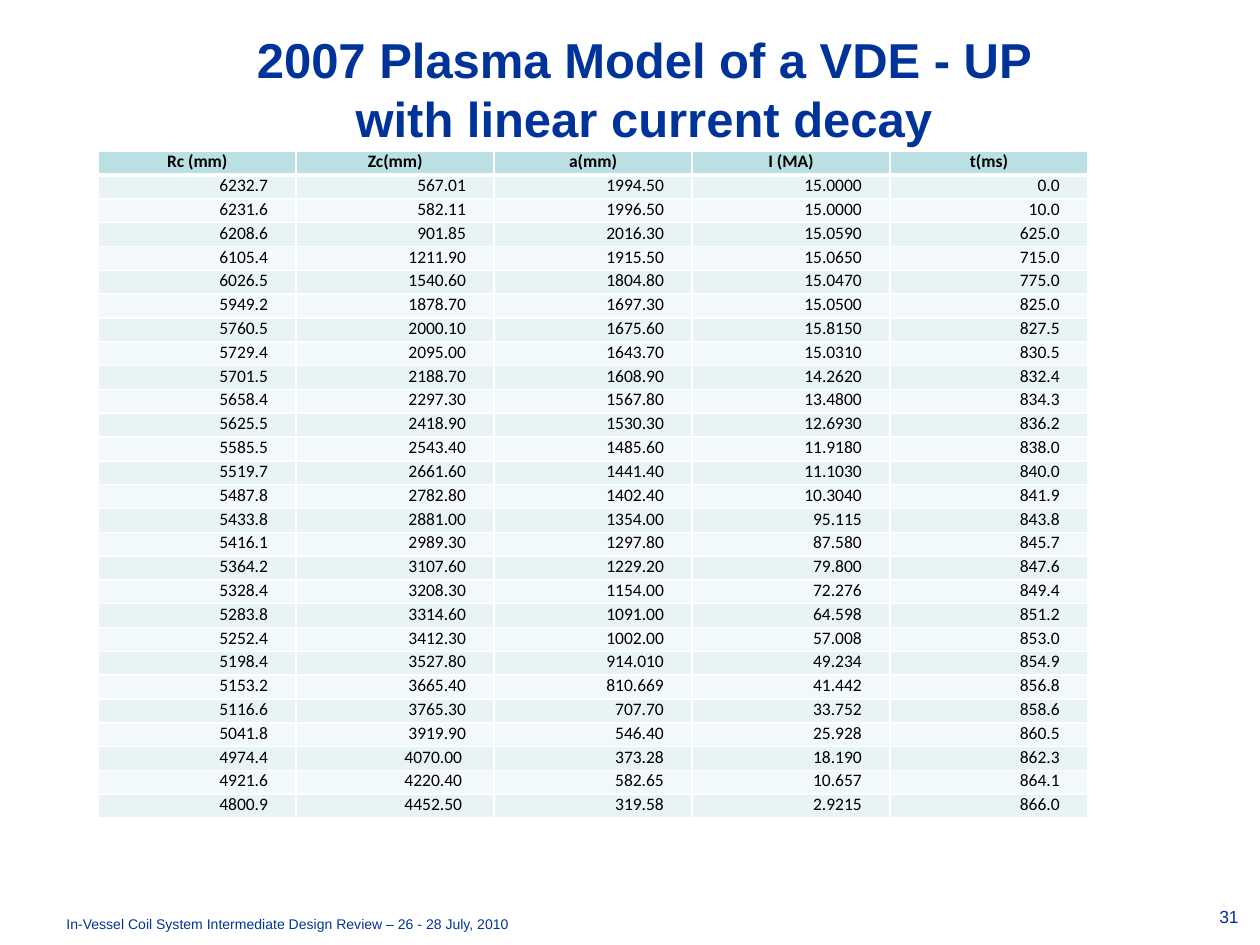
import pptx
import pptx.dml.color
import pptx.enum.text
import pptx.oxml.ns
import pptx.util
import lxml.etree

Cm = pptx.util.Cm
Pt = pptx.util.Pt
ALIGN = pptx.enum.text.PP_ALIGN
ANCHOR = pptx.enum.text.MSO_ANCHOR

COLORS = {
    "navy": "003399",
    "black": "000000",
    "white": "FFFFFF",
    "header": "BBE0E3",
    "odd": "E7F3F4",
    "even": "F3F9FA",
}

HEADINGS = ["Rc (mm)", "Zc(mm)", "a(mm)", "I (MA)", "t(ms)"]

PLASMA_ROWS = [line.split(",") for line in (
    "6232.7,567.01,1994.50,15.0000,0.0",
    "6231.6,582.11,1996.50,15.0000,10.0",
    "6208.6,901.85,2016.30,15.0590,625.0",
    "6105.4,1211.90,1915.50,15.0650,715.0",
    "6026.5,1540.60,1804.80,15.0470,775.0",
    "5949.2,1878.70,1697.30,15.0500,825.0",
    "5760.5,2000.10,1675.60,15.8150,827.5",
    "5729.4,2095.00,1643.70,15.0310,830.5",
    "5701.5,2188.70,1608.90,14.2620,832.4",
    "5658.4,2297.30,1567.80,13.4800,834.3",
    "5625.5,2418.90,1530.30,12.6930,836.2",
    "5585.5,2543.40,1485.60,11.9180,838.0",
    "5519.7,2661.60,1441.40,11.1030,840.0",
    "5487.8,2782.80,1402.40,10.3040,841.9",
    "5433.8,2881.00,1354.00,95.115,843.8",
    "5416.1,2989.30,1297.80,87.580,845.7",
    "5364.2,3107.60,1229.20,79.800,847.6",
    "5328.4,3208.30,1154.00,72.276,849.4",
    "5283.8,3314.60,1091.00,64.598,851.2",
    "5252.4,3412.30,1002.00,57.008,853.0",
    "5198.4,3527.80,914.010,49.234,854.9",
    "5153.2,3665.40,810.669,41.442,856.8",
    "5116.6,3765.30,707.70,33.752,858.6",
    "5041.8,3919.90,546.40,25.928,860.5",
    "4974.4,4070.00 ,373.28,18.190,862.3",
    "4921.6,4220.40 ,582.65,10.657,864.1",
    "4800.9,4452.50 ,319.58,2.9215,866.0",
)]


def rgb(name):
    return pptx.dml.color.RGBColor.from_string(COLORS[name])


class SlideBuilder:
    """Holds the current slide and the style shared by its elements."""

    text_font = "Arial"
    table_font = "Calibri"
    table_size = 10
    cell_inset = Cm(0.18)
    number_indent = Cm(0.39)

    def __init__(self, slide):
        self.s = slide

    def run(self, p, text, font, size, color, bold=False):
        r = p.add_run()
        r.text = text
        r.font.name = font
        r.font.size = Pt(size)
        r.font.bold = bold
        r.font.color.rgb = rgb(color)

    def text(self, text, left, top, width, height, size,
             align=ALIGN.LEFT, anchor=ANCHOR.TOP, bold=False):
        sp = self.s.shapes.add_textbox(Cm(left), Cm(top), Cm(width), Cm(height))
        tf = sp.text_frame
        tf.word_wrap = True
        tf.vertical_anchor = anchor
        p = tf.paragraphs[0]
        p.alignment = align
        self.run(p, text, self.text_font, size, "navy", bold)

    def borders(self, cell, top, bottom):
        """Draw white cell borders; top and bottom are widths in points."""
        tcPr = cell._tc.get_or_add_tcPr()
        widths = {"a:lnL": 1, "a:lnR": 1, "a:lnT": top, "a:lnB": bottom}
        qn = pptx.oxml.ns.qn
        for tag, width in widths.items():
            ln = lxml.etree.SubElement(tcPr, qn(tag), w=str(Pt(width)))
            fill = lxml.etree.SubElement(ln, qn("a:solidFill"))
            lxml.etree.SubElement(fill, qn("a:srgbClr"), val=COLORS["white"])

    def cell(self, cell, text, row):
        is_header = row == 0
        cell.margin_left = cell.margin_right = self.cell_inset
        cell.margin_top = cell.margin_bottom = 0
        self.borders(cell, top=3 if row == 1 else 1, bottom=3 if is_header else 1)
        cell.fill.solid()
        fill = "header" if is_header else ("odd" if row % 2 else "even")
        cell.fill.fore_color.rgb = rgb(fill)
        p = cell.text_frame.paragraphs[0]
        p.alignment = ALIGN.CENTER if is_header else ALIGN.RIGHT
        if not is_header:
            p._p.get_or_add_pPr().set("marR", str(self.number_indent))
        self.run(p, text, self.table_font, self.table_size, "black", is_header)

    def table(self, rows, left, top, col_width, row_height):
        n_rows, n_cols = len(rows), len(rows[0])
        table = self.s.shapes.add_table(
            n_rows, n_cols, Cm(left), Cm(top),
            Cm(col_width * n_cols), Cm(row_height * n_rows)).table
        for column in table.columns:
            column.width = Cm(col_width)
        for i, values in enumerate(rows):
            table.rows[i].height = Cm(row_height)
            for j, value in enumerate(values):
                self.cell(table.cell(i, j), value, i)


def main():
    prs = pptx.Presentation()
    prs.slide_width, prs.slide_height = Cm(25.4), Cm(19.05)
    b = SlideBuilder(prs.slides.add_slide(prs.slide_layouts[6]))
    b.text("2007 Plasma Model of a VDE - UP with linear current decay",
           4.65, 0.84, 16.66, 1.88, 28, ALIGN.CENTER, ANCHOR.MIDDLE, bold=True)
    b.table([HEADINGS] + PLASMA_ROWS, 1.98, 3.05, col_width=3.99, row_height=0.48)
    b.text("In-Vessel Coil System Intermediate Design Review – 26 - 28 July, 2010",
           1.09, 18.34, 11.38, 0.53, 8)
    b.text("31", 23.11, 18.14, 2.11, 1.12, 10, ALIGN.RIGHT)
    prs.save("out.pptx")


if __name__ == "__main__":
    main()
